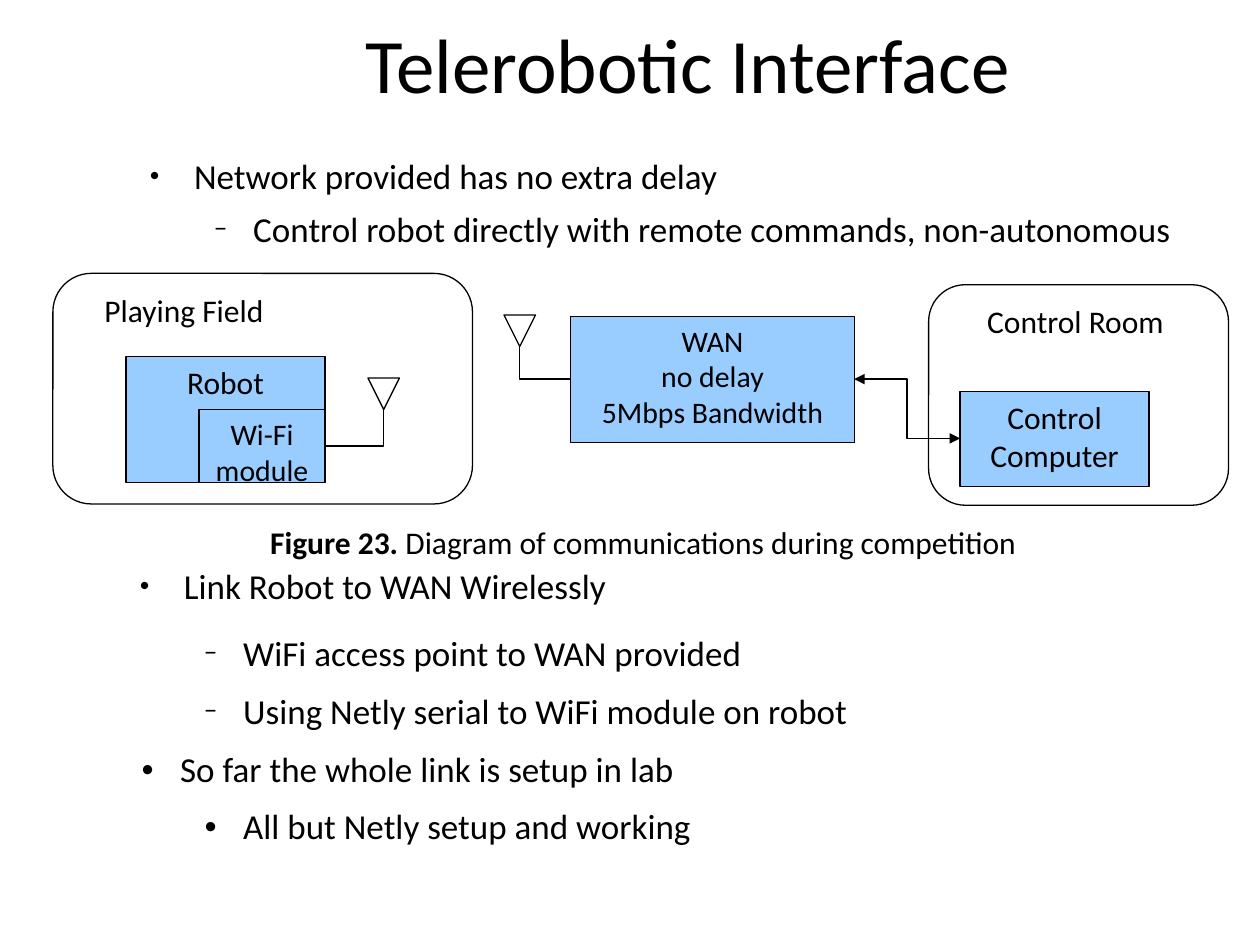
from lxml.etree import SubElement
from pptx import Presentation
from pptx.dml.color import RGBColor
from pptx.enum.shapes import MSO_CONNECTOR, MSO_SHAPE
from pptx.enum.text import MSO_ANCHOR, MSO_AUTO_SIZE, PP_ALIGN
from pptx.oxml.ns import qn
from pptx.util import Inches, Pt

FONT = "Calibri"
COLORS = {"ink": "000000", "block": "99CCFF", "paper": "FFFFFF"}
ANTENNA_SIZE = 0.25


def color(name):
    """Return a named colour."""
    return RGBColor.from_string(COLORS[name])


def place(shape, left, top, width, height):
    """Move and size a shape, in inches."""
    shape.left, shape.top = Inches(left), Inches(top)
    shape.width, shape.height = Inches(width), Inches(height)


def add_run(paragraph, text, size, bold=False):
    """Append one formatted run."""
    run = paragraph.add_run()
    run.text = text
    run.font.name = FONT
    run.font.size = Pt(size)
    run.font.bold = bold
    run.font.color.rgb = color("ink")


def set_bullet(paragraph, character, percent, margin, hang):
    """Give a paragraph a sized bullet and a hanging indent."""
    properties = paragraph._p.get_or_add_pPr()
    properties.set("marL", str(Inches(margin)))
    properties.set("indent", str(-Inches(hang)))
    SubElement(properties, qn("a:buSzPct"), val=str(percent * 1000))
    SubElement(properties, qn("a:buFont"), typeface=FONT)
    SubElement(properties, qn("a:buChar"), char=character)


def fill_title(title, text):
    """Write the slide title."""
    place(title, 1.42, -0.25, 8.08, 1.5)
    title.text_frame.vertical_anchor = MSO_ANCHOR.MIDDLE
    paragraph = title.text_frame.paragraphs[0]
    paragraph.alignment = PP_ALIGN.CENTER
    add_run(paragraph, text, 44)


def fill_list(placeholder, box, items):
    """Write a bulleted list into a body placeholder."""
    place(placeholder, *box)
    frame = placeholder.text_frame
    frame.auto_size = MSO_AUTO_SIZE.NONE
    for index, (text, level, bullet, before, after) in enumerate(items):
        paragraph = frame.add_paragraph() if index else frame.paragraphs[0]
        set_bullet(paragraph, *bullet)
        paragraph.level = level
        paragraph.line_spacing = 1.02
        paragraph.space_before = Pt(before)
        paragraph.space_after = Pt(after)
        add_run(paragraph, text, 20)


def add_outlined(slide, kind, box, fill):
    """Add a thinly outlined shape."""
    shape = slide.shapes.add_shape(kind, *map(Inches, box))
    shape.shadow.inherit = False
    shape.fill.solid()
    shape.fill.fore_color.rgb = color(fill)
    shape.line.color.rgb = color("ink")
    shape.line.width = Pt(0.75)
    return shape


def add_block(slide, box, lines, size=18):
    """Add a blue block with centred lines at its top."""
    shape = add_outlined(slide, MSO_SHAPE.FLOWCHART_PROCESS, box, "block")
    frame = shape.text_frame
    frame.vertical_anchor = MSO_ANCHOR.TOP
    for index, line in enumerate(lines):
        paragraph = frame.add_paragraph() if index else frame.paragraphs[0]
        paragraph.alignment = PP_ALIGN.CENTER
        add_run(paragraph, line, size)


def add_zone(slide, box, label, inset):
    """Add a rounded zone with its label at the top left."""
    shape = add_outlined(slide, MSO_SHAPE.ROUNDED_RECTANGLE, box, "paper")
    frame = shape.text_frame
    frame.vertical_anchor = MSO_ANCHOR.TOP
    frame.margin_left = Inches(inset)
    paragraph = frame.paragraphs[0]
    paragraph.alignment = PP_ALIGN.LEFT
    add_run(paragraph, label, 18)


def add_link(slide, start, end, bend=0.5, arrows=False):
    """Add an elbow connector that turns at a fraction of its width."""
    link = slide.shapes.add_connector(MSO_CONNECTOR.ELBOW, *map(Inches, start + end))
    link.line.color.rgb = color("ink")
    link.line.width = Pt(0.75)
    properties = link._element.spPr
    guides = properties.find(qn("a:prstGeom")).find(qn("a:avLst"))
    SubElement(guides, qn("a:gd"), name="adj1", fmla=f"val {int(bend * 100000)}")
    if arrows:
        for tag in ("a:headEnd", "a:tailEnd"):
            SubElement(properties.find(qn("a:ln")), qn(tag), type="triangle")
    SubElement(properties, qn("a:effectLst"))


def add_antenna(slide, left, top, port):
    """Add an antenna and its link to a port."""
    box = (left, top, ANTENNA_SIZE, ANTENNA_SIZE)
    add_outlined(slide, MSO_SHAPE.FLOWCHART_MERGE, box, "paper")
    add_link(slide, port, (left + ANTENNA_SIZE / 2, top + ANTENNA_SIZE), bend=1)


def add_caption(slide, number, text):
    """Add the figure caption."""
    box = slide.shapes.add_textbox(*map(Inches, (1.69, 4.1, 6.83, 0.4)))
    box.text_frame.word_wrap = True
    paragraph = box.text_frame.paragraphs[0]
    paragraph.alignment = PP_ALIGN.CENTER
    add_run(paragraph, number + " ", 18, bold=True)
    add_run(paragraph, text, 18)


def main():
    """Build the slide and save it."""
    presentation = Presentation()
    presentation.slide_width, presentation.slide_height = Inches(10), Inches(7.5)
    slide = presentation.slides.add_slide(presentation.slide_layouts[3])
    title, network_list, link_list = slide.placeholders

    main_dot = ("●", 45, 0.94, 0.35)
    dash = ("−", 75, 1.41, 0.31)
    fill_title(title, "Telerobotic Interface")
    fill_list(network_list, (0.5, 1.17, 9, 1.33), [
        ("Network provided has no extra delay", 0, main_dot, 0, 0),
        ("Control robot directly with remote commands, non-autonomous", 1, dash, 6, 0),
    ])
    fill_list(link_list, (0.42, 4.42, 9, 2.5), [
        ("Link Robot to WAN Wirelessly", 0, main_dot, 0, 14.2),
        ("WiFi access point to WAN provided", 1, dash, 0, 8.5),
        ("Using Netly serial to WiFi module on robot", 1, dash, 0, 8.5),
        ("So far the whole link is setup in lab", 0, ("•", 75, 0.91, 0.31), 0, 8.5),
        ("All but Netly setup and working", 1, ("•", 75, 1.41, 0.31), 0, 8.5),
    ])

    add_zone(slide, (0.42, 2.17, 3.33, 1.83), "Playing Field", 0.32)
    add_zone(slide, (7.37, 2.26, 2.38, 1.75), "Control Room", 0.38)
    add_block(slide, (4.53, 2.51, 2.25, 1), ["WAN", "no delay", "5Mbps Bandwidth"], 17)
    add_block(slide, (1, 2.83, 1.58, 1), ["Robot"])
    add_block(slide, (1.58, 3.25, 1, 0.58), ["Wi-Fi", "module"], 17)
    add_block(slide, (7.62, 3.11, 1.5, 0.75), ["Control", "Computer"])
    add_link(slide, (7.62, 3.48), (6.78, 3.01), arrows=True)
    add_antenna(slide, 4, 2.5, (4.53, 3.01))
    add_antenna(slide, 2.92, 3, (2.58, 3.54))
    add_caption(slide, "Figure 23.", "Diagram of communications during competition")
    presentation.save("out.pptx")


if __name__ == "__main__":
    main()
